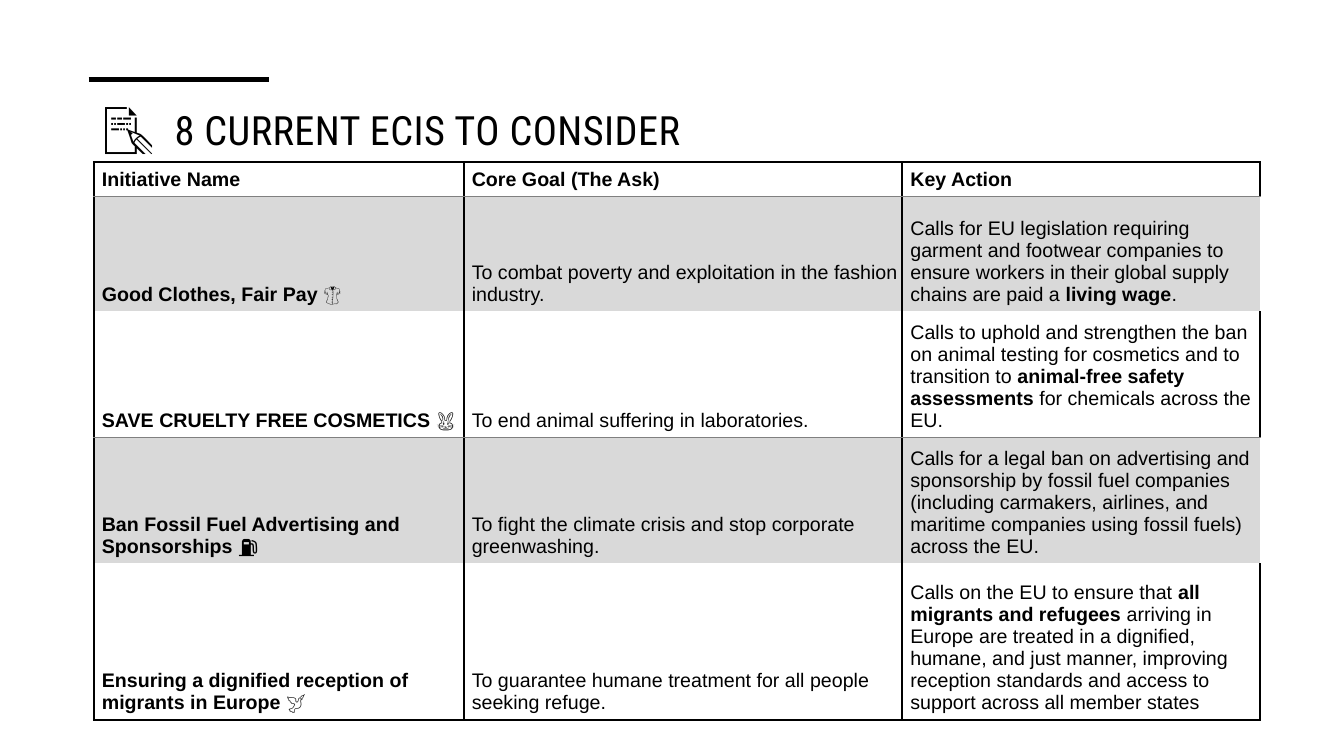
"""Build the slide listing current European citizens' initiatives."""
from dataclasses import dataclass

from lxml import etree
from pptx import Presentation
from pptx.dml.color import RGBColor
from pptx.enum.shapes import MSO_CONNECTOR
from pptx.enum.text import MSO_ANCHOR, MSO_AUTO_SIZE, PP_ALIGN
from pptx.oxml.ns import qn
from pptx.util import Inches, Pt

STRAIGHT = MSO_CONNECTOR.STRAIGHT
TOP, BOTTOM = MSO_ANCHOR.TOP, MSO_ANCHOR.BOTTOM
LEFT = PP_ALIGN.LEFT
NO_FIT = MSO_AUTO_SIZE.NONE
TITLE_ONLY = 5


@dataclass(frozen=True)
class Theme:
    ink: str = "000000"
    rule: str = "808080"
    band: str = "D9D9D9"
    title_font: str = "Roboto Condensed"
    body_font: str = "Arial"
    icon_size: float = 36
    title_size: float = 28.8
    body_size: float = 14
    thick: float = 1.5
    thin: float = 0.5
    accent: float = 3.5


def add_run(p, text, *, font, size, color, bold=False, spacing=None):
    r = p.add_run()
    r.text = text
    r.font.name = font
    r.font.size = Pt(size)
    r.font.bold = bold
    r.font.color.rgb = RGBColor.from_string(color)
    if spacing is not None:
        r.font._element.set("spc", str(round(spacing * 100)))


class Deck:
    def __init__(self, prs, theme):
        self.theme = theme
        self.s = prs.slides.add_slide(prs.slide_layouts[TITLE_ONLY])

    def title(self, icon, text, box):
        t = self.theme
        sp = self.s.shapes.title
        sp.left, sp.top, sp.width, sp.height = map(Inches, box)
        tf = sp.text_frame
        tf.word_wrap = True
        tf.auto_size = NO_FIT
        tf.vertical_anchor = TOP
        p = tf.paragraphs[0]
        p.alignment = LEFT
        add_run(p, icon, font=t.title_font, size=t.icon_size, color=t.ink, spacing=14)
        add_run(p, text, font=t.title_font, size=t.title_size, color=t.ink, spacing=0.3)

    def line(self, x1, y1, x2, y2):
        sp = self.s.shapes.add_connector(STRAIGHT, *map(Inches, (x1, y1, x2, y2)))
        sp.line.color.rgb = RGBColor.from_string(self.theme.ink)
        sp.line.width = Pt(self.theme.accent)
        etree.SubElement(sp._element.spPr, qn("a:effectLst"))

    def borders(self, cell, edges):
        tc_pr = cell._tc.get_or_add_tcPr()
        for i, side in enumerate("LRTB"):
            ln = etree.Element(qn(f"a:ln{side}"))
            if side in edges:
                color, width = edges[side]
                ln.set("w", str(Pt(width)))
                fill = etree.SubElement(ln, qn("a:solidFill"))
                etree.SubElement(fill, qn("a:srgbClr"), val=color)
            else:
                etree.SubElement(ln, qn("a:noFill"))
            tc_pr.insert(i, ln)

    def cell(self, cell, runs, banded):
        t = self.theme
        cell.margin_left, cell.margin_right = Inches(0.08), Inches(0.02)
        cell.margin_top = cell.margin_bottom = Inches(0.06)
        cell.vertical_anchor = BOTTOM
        if banded:
            cell.fill.solid()
            cell.fill.fore_color.rgb = RGBColor.from_string(t.band)
        else:
            cell.fill.background()
        p = cell.text_frame.paragraphs[0]
        for text, bold in runs:
            add_run(p, text, font=t.body_font, size=t.body_size, color=t.ink, bold=bold)

    def table(self, rows, left, top, widths, heights):
        t = self.theme
        frame = self.s.shapes.add_table(
            len(rows), len(widths), Inches(left), Inches(top),
            Inches(sum(widths)), Inches(sum(heights)))
        table = frame.table
        for col, width in zip(table.columns, widths):
            col.width = Inches(width)
        for row, height in zip(table.rows, heights):
            row.height = Inches(height)
        thick, thin = (t.ink, t.thick), (t.rule, t.thin)
        last_row, last_col = len(rows) - 1, len(widths) - 1
        for i, row in enumerate(rows):
            banded = i % 2 == 1
            for j, runs in enumerate(row):
                edges = {"L": thick}
                if banded:
                    edges["T"] = thin
                else:
                    edges["B"] = thick if i == last_row else thin
                if i == 0:
                    edges["T"] = thick
                if not banded or j < last_col:
                    edges["R"] = thick
                cell = table.cell(i, j)
                self.cell(cell, runs, banded)
                self.borders(cell, edges)


HEADER = [[(name, True)] for name in
          ("Initiative Name", "Core Goal (The Ask)", "Key Action")]
INITIATIVES = [
    ("Good Clothes, Fair Pay", "👚",
     "To combat poverty and exploitation in the fashion industry.",
     [("Calls for EU legislation requiring garment and footwear companies to "
       "ensure workers in their global supply chains are paid a ", False),
      ("living wage", True), (".", False)]),
    ("SAVE CRUELTY FREE COSMETICS", "🐰",
     "To end animal suffering in laboratories.",
     [("Calls to uphold and strengthen the ban on animal testing for cosmetics "
       "and to transition to ", False),
      ("animal-free safety assessments ", True),
      ("for chemicals across the EU.", False)]),
    ("Ban Fossil Fuel Advertising and Sponsorships", "⛽",
     "To fight the climate crisis and stop corporate greenwashing.",
     [("Calls for a legal ban on advertising and sponsorship by fossil fuel "
       "companies (including carmakers, airlines, and maritime companies using "
       "fossil fuels) across the EU.", False)]),
    ("Ensuring a dignified reception of migrants in Europe", "🕊️",
     "To guarantee humane treatment for all people seeking refuge.",
     [("Calls on the EU to ensure that ", False),
      ("all migrants and refugees ", True),
      ("arriving in Europe are treated in a dignified, humane, and just manner, "
       "improving reception standards and access to support across all member "
       "states", False)]),
]


def main():
    prs = Presentation()
    prs.slide_width, prs.slide_height = Inches(13.33), Inches(7.5)
    deck = Deck(prs, Theme())
    deck.title("📝", "8 CURRENT ECIS TO CONSIDER", (0.93, 0.89, 10.29, 0.57))
    deck.line(0.88, 0.79, 2.67, 0.79)
    rows = [HEADER] + [
        [[(name, True), (f" {icon}", False)], [(goal, False)], action]
        for name, icon, goal, action in INITIATIVES]
    deck.table(rows, 0.93, 1.61, (3.67, 4.35, 3.55), (0.34, 1.14, 1.25, 1.25, 1.55))
    prs.save("out.pptx")


if __name__ == "__main__":
    main()
